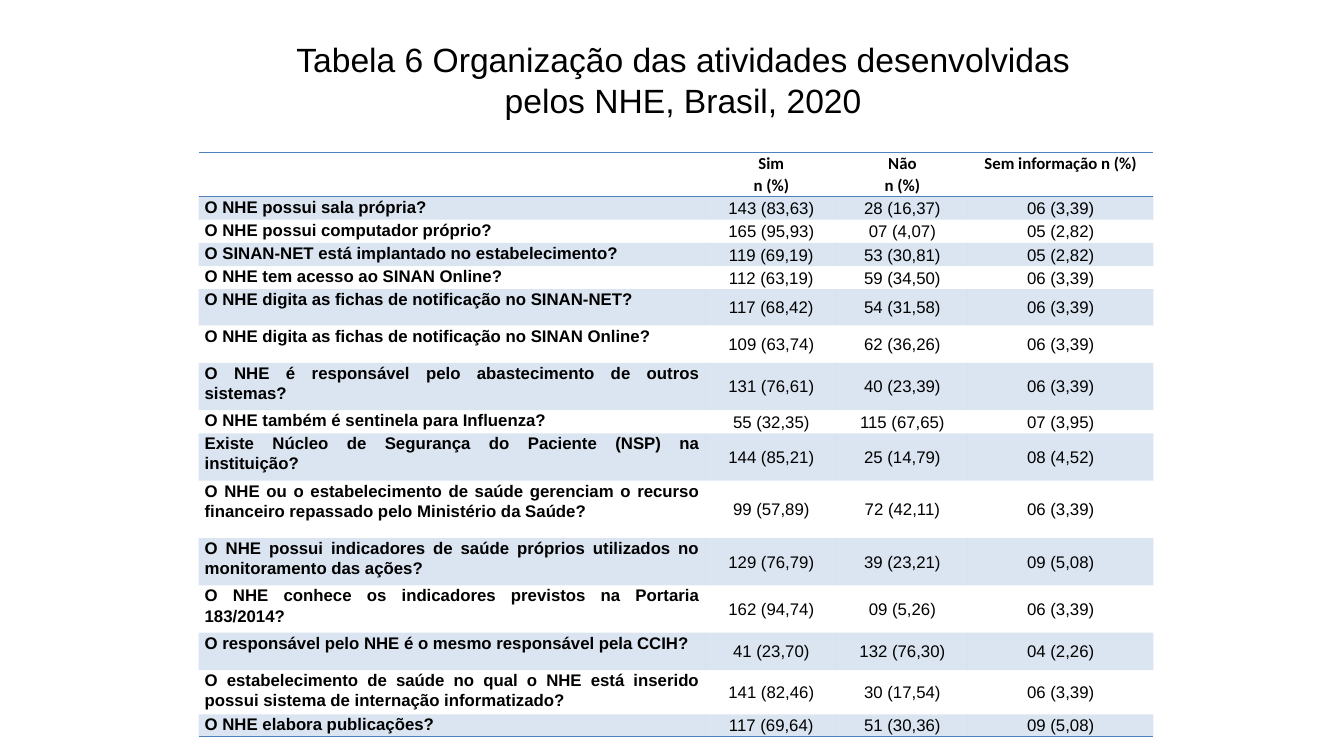
from lxml.etree import SubElement
from pptx import Presentation
from pptx.dml.color import RGBColor
from pptx.enum.text import MSO_ANCHOR, PP_ALIGN
from pptx.oxml.ns import qn
from pptx.util import Pt

PX = 9144  # 100 px to the inch
BLACK = RGBColor(0, 0, 0)
BLUE = RGBColor(0x4F, 0x81, 0xBD)
NO_STYLE = "{2D5ABB26-0587-4C30-8999-92F81FD0307C}"

COL_WIDTHS = [503, 130, 130, 184]
HEADER_HEIGHT = 44
HEADER = ["", "Sim\nn (%)", "Não\nn (%)", "Sem informação n (%)"]
ROWS = [
    (23, "O NHE possui sala própria?", "143 (83,63)", "28 (16,37)", "06 (3,39)"),
    (23, "O NHE possui computador próprio?", "165 (95,93)", "07 (4,07)", "05 (2,82)"),
    (23, "O SINAN-NET está implantado no estabelecimento?", "119 (69,19)", "53 (30,81)", "05 (2,82)"),
    (23, "O NHE tem acesso ao SINAN Online?", "112 (63,19)", "59 (34,50)", "06 (3,39)"),
    (36, "O NHE digita as fichas de notificação no SINAN-NET?", "117 (68,42)", "54 (31,58)", "06 (3,39)"),
    (37, "O NHE digita as fichas de notificação no SINAN Online?", "109 (63,74)", "62 (36,26)", "06 (3,39)"),
    (47, "O NHE é responsável pelo abastecimento de outros sistemas?",
     "131 (76,61)", "40 (23,39)", "06 (3,39)"),
    (23, "O NHE também é sentinela para Influenza?", "55 (32,35)", "115 (67,65)", "07 (3,95)"),
    (47, "Existe Núcleo de Segurança do Paciente (NSP) na instituição?",
     "144 (85,21)", "25 (14,79)", "08 (4,52)"),
    (57, "O NHE ou o estabelecimento de saúde gerenciam o recurso financeiro repassado pelo Ministério da Saúde?",
     "99 (57,89)", "72 (42,11)", "06 (3,39)"),
    (47, "O NHE possui indicadores de saúde próprios utilizados no monitoramento das ações?",
     "129 (76,79)", "39 (23,21)", "09 (5,08)"),
    (47, "O NHE conhece os indicadores previstos na Portaria 183/2014?",
     "162 (94,74)", "09 (5,26)", "06 (3,39)"),
    (37, "O responsável pelo NHE é o mesmo responsável pela CCIH?", "41 (23,70)", "132 (76,30)", "04 (2,26)"),
    (44, "O estabelecimento de saúde no qual o NHE está inserido possui sistema de internação informatizado?",
     "141 (82,46)", "30 (17,54)", "06 (3,39)"),
    (22, "O NHE elabora publicações?", "117 (69,64)", "51 (30,36)", "09 (5,08)"),
]


def write(p, text, align, **font):
    p.alignment = align
    r = p.add_run()
    r.text = text
    r.font.color.rgb = BLACK
    for name, value in font.items():
        setattr(r.font, name, value)


def add_border(cell, tag):
    ln = SubElement(cell._tc.get_or_add_tcPr(), qn(tag), w=str(Pt(1)))
    SubElement(SubElement(ln, qn("a:solidFill")), qn("a:srgbClr"), val=str(BLUE))


prs = Presentation()
prs.slide_width, prs.slide_height = 1333 * PX, 750 * PX
s = prs.slides.add_slide(prs.slide_layouts[6])

heights = [HEADER_HEIGHT] + [row[0] for row in ROWS]
texts = [HEADER] + [row[1:] for row in ROWS]
table = s.shapes.add_table(len(texts), len(COL_WIDTHS), 197 * PX, 151 * PX,
                           sum(COL_WIDTHS) * PX, sum(heights) * PX).table
table.first_row = table.horz_banding = False
table._tbl.tblPr.find(qn("a:tableStyleId")).text = NO_STYLE
for column, width in zip(table.columns, COL_WIDTHS):
    column.width = width * PX

for i, (height, row_texts) in enumerate(zip(heights, texts)):
    table.rows[i].height = height * PX
    for j, text in enumerate(row_texts):
        cell = table.cell(i, j)
        is_header, is_question = i == 0, j == 0
        cell.margin_left = cell.margin_right = 6 * PX
        cell.margin_top = cell.margin_bottom = 0
        cell.vertical_anchor = MSO_ANCHOR.TOP if is_header or is_question else MSO_ANCHOR.MIDDLE
        if is_header:
            add_border(cell, "a:lnT")
        if i in (0, len(ROWS)):
            add_border(cell, "a:lnB")
        if i % 2:
            cell.fill.solid()
            cell.fill.fore_color.rgb = BLUE
            color = cell._tc.tcPr.find(qn("a:solidFill")).find(qn("a:srgbClr"))
            SubElement(color, qn("a:alpha"), val="20000")
        else:
            cell.fill.background()
        tf = cell.text_frame
        for k, line in enumerate(text.split("\n") if text else []):
            p = tf.add_paragraph() if k else tf.paragraphs[0]
            p.line_spacing = 1.07
            write(p, line, PP_ALIGN.JUSTIFY if is_question else PP_ALIGN.CENTER,
                  size=Pt(12), bold=is_header or is_question,
                  name="Calibri" if is_header else "Arial")

tf = s.shapes.add_textbox(262 * PX, 34 * PX, 831 * PX, 91 * PX).text_frame
tf.word_wrap = True
write(tf.paragraphs[0], "Tabela 6 Organização das atividades desenvolvidas pelos NHE, Brasil, 2020",
      PP_ALIGN.CENTER, size=Pt(24), name="Arial")

prs.save("out.pptx")
